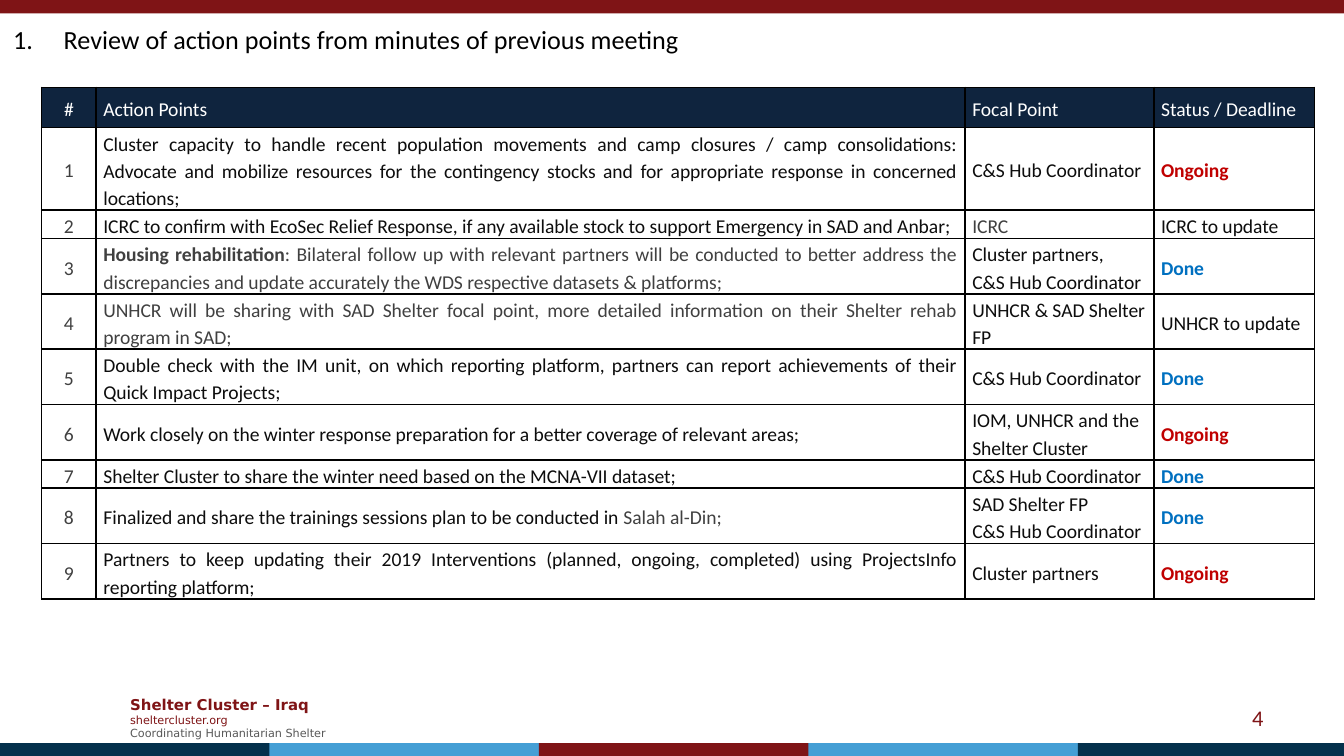
"""Build the slide reviewing action points from the previous cluster meeting."""
from dataclasses import dataclass
from typing import NamedTuple

import pptx
import pptx.dml.color
import pptx.enum.shapes
import pptx.enum.text
import pptx.oxml
import pptx.oxml.ns
import pptx.util

ALIGN = pptx.enum.text.PP_ALIGN
MIDDLE = pptx.enum.text.MSO_ANCHOR.MIDDLE


@dataclass(frozen=True)
class Theme:
    """Colours, fonts and type sizes."""
    maroon: str = "7F1416"
    navy: str = "04314C"
    sky: str = "459FD5"
    header: str = "0F243E"
    white: str = "FFFFFF"
    black: str = "000000"
    ink: str = "0D0D0D"
    grey: str = "404040"
    pale: str = "595959"
    red: str = "C00000"
    blue: str = "0070C0"
    body_font: str = "Calibri"
    footer_font: str = "DejaVu Sans"
    title_size: float = 14
    number_size: float = 12
    table_size: float = 10.5
    brand_size: float = 8
    small_size: float = 6


THEME = Theme()


class Grid(NamedTuple):
    """A 16:9 slide divided into equal columns and rows."""
    width: int = pptx.util.Inches(10)
    height: int = pptx.util.Inches(10) * 9 // 16
    columns: float = 100
    rows: float = 56.25

    def across(self, count: float) -> int:
        """Return the length of a number of columns."""
        return round(self.width * count / self.columns)

    def down(self, count: float) -> int:
        """Return the length of a number of rows."""
        return round(self.height * count / self.rows)


GRID = Grid()


class Area(NamedTuple):
    """A rectangle in grid columns and rows."""
    left: float
    top: float
    width: float
    height: float

    def place(self) -> tuple[int, int, int, int]:
        """Return the rectangle in slide units."""
        return (GRID.across(self.left), GRID.down(self.top),
                GRID.across(self.width), GRID.down(self.height))


class Span(NamedTuple):
    """Text in one format."""
    text: str
    color: str = THEME.ink
    bold: bool = False
    size: float = THEME.table_size
    name: str = THEME.body_font


class Action(NamedTuple):
    """One action point with its owners and status."""
    point: tuple[Span, ...]
    owners: tuple[Span, ...]
    status: Span
    height: float = 3.3


HUB = Span("C&S Hub Coordinator")
DONE = Span("Done", THEME.blue, True)
ONGOING = Span("Ongoing", THEME.red, True)
HEADINGS = ("#", "Action Points", "Focal Point", "Status / Deadline")
COLUMNS = (4.05, 64.65, 14.05, 11.95)
HEADER_HEIGHT = 3
ACTIONS = (
    Action((Span("Cluster capacity to handle recent population movements and camp closures / camp "
                 "consolidations: Advocate and mobilize resources for the contingency stocks and "
                 "for appropriate response in concerned locations;"),), (HUB,), ONGOING),
    Action((Span("ICRC to confirm with EcoSec Relief Response, if any available stock to support "
                 "Emergency in SAD and Anbar;"),),
           (Span("ICRC", THEME.grey),), Span("ICRC to update"), 1.7),
    Action((Span("Housing rehabilitation", THEME.grey, True),
            Span(": Bilateral follow up with relevant partners will be conducted to better address "
                 "the discrepancies and update accurately the WDS respective datasets & platforms;",
                 THEME.grey)), (Span("Cluster partners,"), HUB), DONE),
    Action((Span("UNHCR will be sharing with SAD Shelter focal point, more detailed information on "
                 "their Shelter rehab program in SAD;", THEME.grey),),
           (Span("UNHCR & SAD Shelter FP"),), Span("UNHCR to update"), 1.7),
    Action((Span("Double check with the IM unit, on which reporting platform, partners can report "
                 "achievements of their Quick Impact Projects;"),), (HUB,), DONE),
    Action((Span("Work closely on the winter response preparation for a better coverage of "
                 "relevant areas;"),), (Span("IOM, UNHCR and the Shelter Cluster"),), ONGOING),
    Action((Span("Shelter Cluster to share the winter need based on the MCNA-VII dataset;"),),
           (HUB,), DONE, 1.7),
    Action((Span("Finalized and share the trainings sessions plan to be conducted in "),
            Span("Salah al-Din;", THEME.grey)), (Span("SAD Shelter FP"), HUB), DONE),
    Action((Span("Partners to keep updating their 2019 Interventions (planned, ongoing, completed) "
                 "using ProjectsInfo reporting platform;"),),
           (Span("Cluster partners"),), ONGOING),
)


def write(frame, lines: list[tuple[Span, ...]], **layout) -> None:
    """Fill a text frame with one paragraph per line of spans."""
    for index, line in enumerate(lines):
        para = frame.paragraphs[0] if index == 0 else frame.add_paragraph()
        for key, value in layout.items():
            setattr(para, key, value)
        for span in line:
            run = para.add_run()
            run.text = span.text
            formats = {"size": pptx.util.Pt(span.size), "name": span.name, "bold": span.bold}
            for key, value in formats.items():
                setattr(run.font, key, value)
            run.font.color.rgb = pptx.dml.color.RGBColor.from_string(span.color)


def add_text(page, area: Area, lines: list[tuple[Span, ...]], **layout):
    """Add a wrapped, vertically centred text box."""
    frame = page.shapes.add_textbox(*area.place()).text_frame
    frame.word_wrap, frame.vertical_anchor = True, MIDDLE
    write(frame, lines, **layout)
    return frame


def add_band(page, area: Area, color: str) -> None:
    """Add a plain coloured band."""
    band = page.shapes.add_shape(pptx.enum.shapes.MSO_SHAPE.RECTANGLE, *area.place())
    band.shadow.inherit = False
    band.fill.solid()
    band.fill.fore_color.rgb = pptx.dml.color.RGBColor.from_string(color)
    band.line.fill.background()


def number_title(frame) -> None:
    """Give the title a hanging automatic number."""
    properties = frame.paragraphs[0]._p.get_or_add_pPr()
    indent = GRID.across(3.75)
    properties.set("marL", str(indent))
    properties.set("indent", str(-indent))
    properties.append(pptx.oxml.parse_xml(
        f'<a:buAutoNum {pptx.oxml.ns.nsdecls("a")} type="arabicPeriod"/>'))


def fill_cell(cell, lines: list[tuple[Span, ...]], align, fill: str = "") -> None:
    """Write, fill and border one table cell."""
    formats = {"margin_left": GRID.across(0.55), "margin_right": GRID.across(0.55),
               "margin_top": GRID.down(0.1), "margin_bottom": 0, "vertical_anchor": MIDDLE}
    for key, value in formats.items():
        setattr(cell, key, value)
    write(cell.text_frame, lines, alignment=align, line_spacing=1.15)
    if fill:
        cell.fill.solid()
        cell.fill.fore_color.rgb = pptx.dml.color.RGBColor.from_string(fill)
    else:
        cell.fill.background()
    for index, side in enumerate("LRTB"):
        cell._tc.get_or_add_tcPr().insert(index, pptx.oxml.parse_xml(
            f'<a:ln{side} {pptx.oxml.ns.nsdecls("a")} w="{pptx.util.Pt(1)}"><a:solidFill>'
            f'<a:srgbClr val="{THEME.black}"/></a:solidFill></a:ln{side}>'))


def add_actions(page) -> None:
    """Add the table of action points."""
    heights = (HEADER_HEIGHT, *(action.height for action in ACTIONS))
    area = Area(3.1, 6.5, sum(COLUMNS), sum(heights))
    table = page.shapes.add_table(len(heights), len(COLUMNS), *area.place()).table
    table.first_row = table.horz_banding = False
    for column, width in zip(table.columns, COLUMNS):
        column.width = GRID.across(width)
    for row, height in zip(table.rows, heights):
        row.height = GRID.down(height)
    aligns = (ALIGN.CENTER, ALIGN.JUSTIFY, ALIGN.LEFT, ALIGN.JUSTIFY)
    for column, heading in enumerate(HEADINGS):
        fill_cell(table.cell(0, column), [(Span(heading, THEME.white),)],
                  aligns[column], THEME.header)
    for number, action in enumerate(ACTIONS, 1):
        contents = ([(Span(str(number), THEME.grey),)], [action.point],
                    [(owner,) for owner in action.owners], [(action.status,)])
        for column, lines in enumerate(contents):
            fill_cell(table.cell(number, column), lines, aligns[column])


def main() -> None:
    """Build and save the deck."""
    deck = pptx.Presentation()
    deck.slide_width, deck.slide_height = GRID.width, GRID.height
    page = deck.slides.add_slide(deck.slide_layouts[6])
    footer = (("Shelter Cluster – Iraq", THEME.maroon, True, THEME.brand_size),
              ("sheltercluster.org", THEME.maroon, False, THEME.small_size),
              ("Coordinating Humanitarian Shelter", THEME.pale, False, THEME.small_size))
    add_text(page, Area(8.7, 51.2, 17.3, 4.4),
             [(Span(*line, THEME.footer_font),) for line in footer])
    add_band(page, Area(0, 0, 100, 1), THEME.maroon)
    for index, color in enumerate((THEME.navy, THEME.sky, THEME.maroon, THEME.sky, THEME.navy)):
        add_band(page, Area(index * 20.05, 55.3, 20.1, 1), color)
    add_text(page, Area(71.7, 51.9, 23.3, 3),
             [(Span("4", THEME.maroon, size=THEME.number_size),)], alignment=ALIGN.RIGHT)
    number_title(add_text(page, Area(0, 1.25, 100, 3.3), [(Span(
        "Review of action points from minutes of previous meeting",
        THEME.black, size=THEME.title_size),)]))
    add_actions(page)
    deck.save("out.pptx")


if __name__ == "__main__":
    main()
